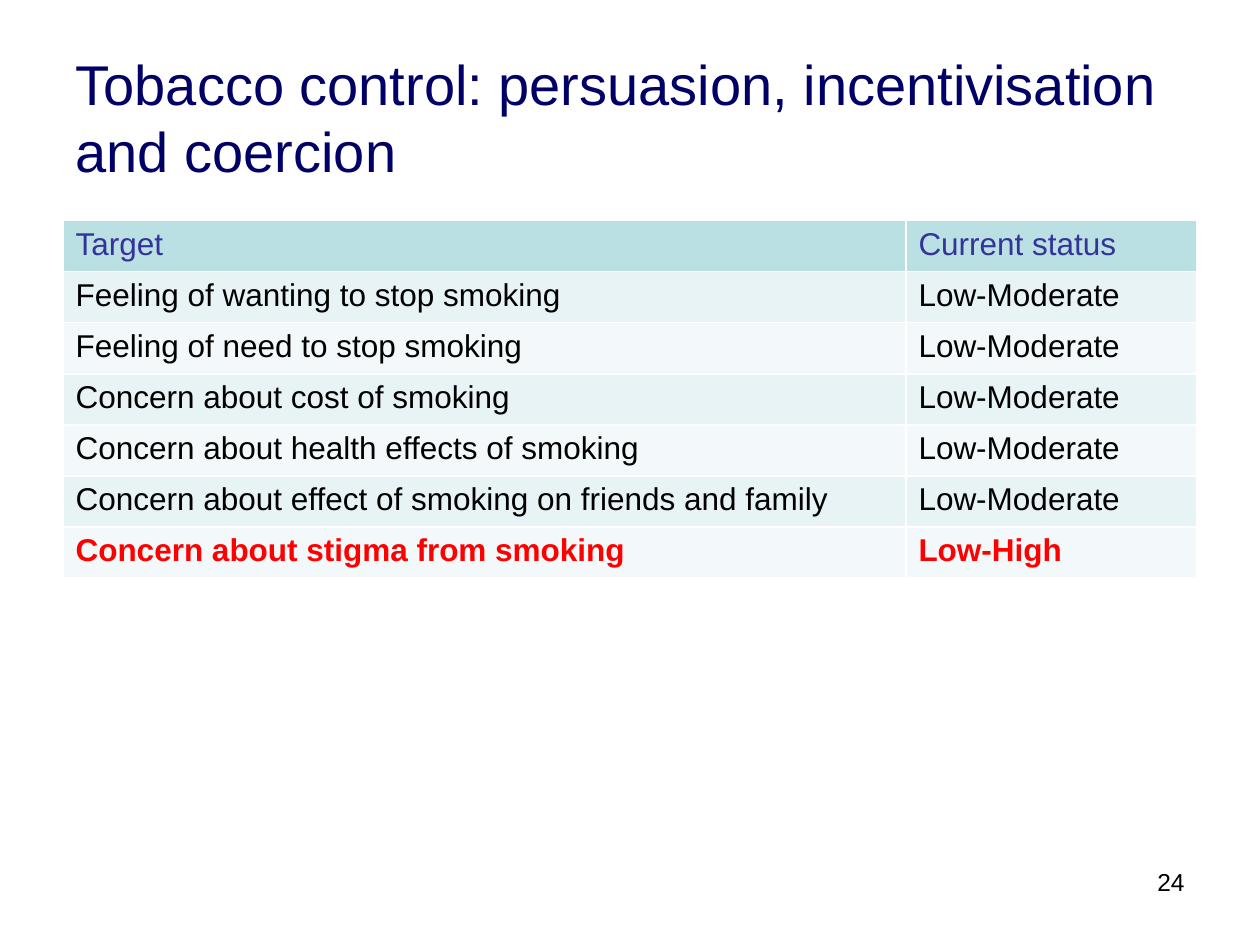
import pptx
import pptx.dml.color
import pptx.enum.text
import pptx.util

Inches = pptx.util.Inches
ALIGN = pptx.enum.text.PP_ALIGN
ANCHOR = pptx.enum.text.MSO_ANCHOR

COLORS = {
    "title": "000066",
    "header": "333399",
    "text": "000000",
    "highlight": "FF0000",
    "header_fill": "BBE0E3",
    "odd_fill": "E7F3F4",
    "even_fill": "F3F9FA",
}

STATUS_ROWS = [
    ("Target", "Current status"),
    ("Feeling of wanting to stop smoking", "Low-Moderate"),
    ("Feeling of need to stop smoking", "Low-Moderate"),
    ("Concern about cost of smoking", "Low-Moderate"),
    ("Concern about health effects of smoking", "Low-Moderate"),
    ("Concern about effect of smoking on friends and family", "Low-Moderate"),
    ("Concern about stigma from smoking", "Low-High"),
]


def rgb(name):
    return pptx.dml.color.RGBColor.from_string(COLORS[name])


class SlideBuilder:
    font_name = "Arial"

    def __init__(self, prs):
        self.s = prs.slides.add_slide(prs.slide_layouts[5])

    def set_text(self, tf, text, size, color, bold=False, align=ALIGN.LEFT):
        tf.text = text
        p = tf.paragraphs[0]
        p.alignment = align
        p.font.name = self.font_name
        p.font.size = pptx.util.Pt(size)
        p.font.bold = bold
        p.font.color.rgb = rgb(color)

    def title(self, text, left, top, width, height):
        sp = self.s.shapes.title
        sp.left, sp.top = Inches(left), Inches(top)
        sp.width, sp.height = Inches(width), Inches(height)
        tf = sp.text_frame
        tf.word_wrap = True
        tf.auto_size = pptx.enum.text.MSO_AUTO_SIZE.NONE
        tf.vertical_anchor = ANCHOR.MIDDLE
        self.set_text(tf, text, 32, "title")

    def table(self, rows, left, top, col_widths, height):
        table = self.s.shapes.add_table(
            len(rows), len(col_widths), Inches(left), Inches(top),
            Inches(sum(col_widths)), Inches(height)).table
        for column, width in zip(table.columns, col_widths):
            column.width = Inches(width)
        for i, row in enumerate(rows):
            last = i == len(rows) - 1
            if i == 0:
                fill, color = "header_fill", "header"
            else:
                fill = "odd_fill" if i % 2 else "even_fill"
                color = "highlight" if last else "text"
            for j, text in enumerate(row):
                cell = table.cell(i, j)
                cell.fill.solid()
                cell.fill.fore_color.rgb = rgb(fill)
                self.set_text(cell.text_frame, text, 18, color, bold=last)

    def page_number(self, text, left, top, width, height):
        sp = self.s.shapes.add_textbox(
            Inches(left), Inches(top), Inches(width), Inches(height))
        sp.text_frame.word_wrap = True
        self.set_text(sp.text_frame, text, 14, "text", align=ALIGN.RIGHT)


def main():
    prs = pptx.Presentation()
    prs.slide_width, prs.slide_height = Inches(10), Inches(7.5)
    slide = SlideBuilder(prs)

    # Title
    slide.title("Tobacco control: persuasion, incentivisation and coercion",
                0.5, 0.3, 8.97, 1.25)

    # Targets and their current status
    slide.table(STATUS_ROWS, 0.5, 1.75, (6.69, 2.31), 2.84)

    # Page number
    slide.page_number("24", 6.73, 6.83, 2.77, 0.52)

    prs.save("out.pptx")


if __name__ == "__main__":
    main()
